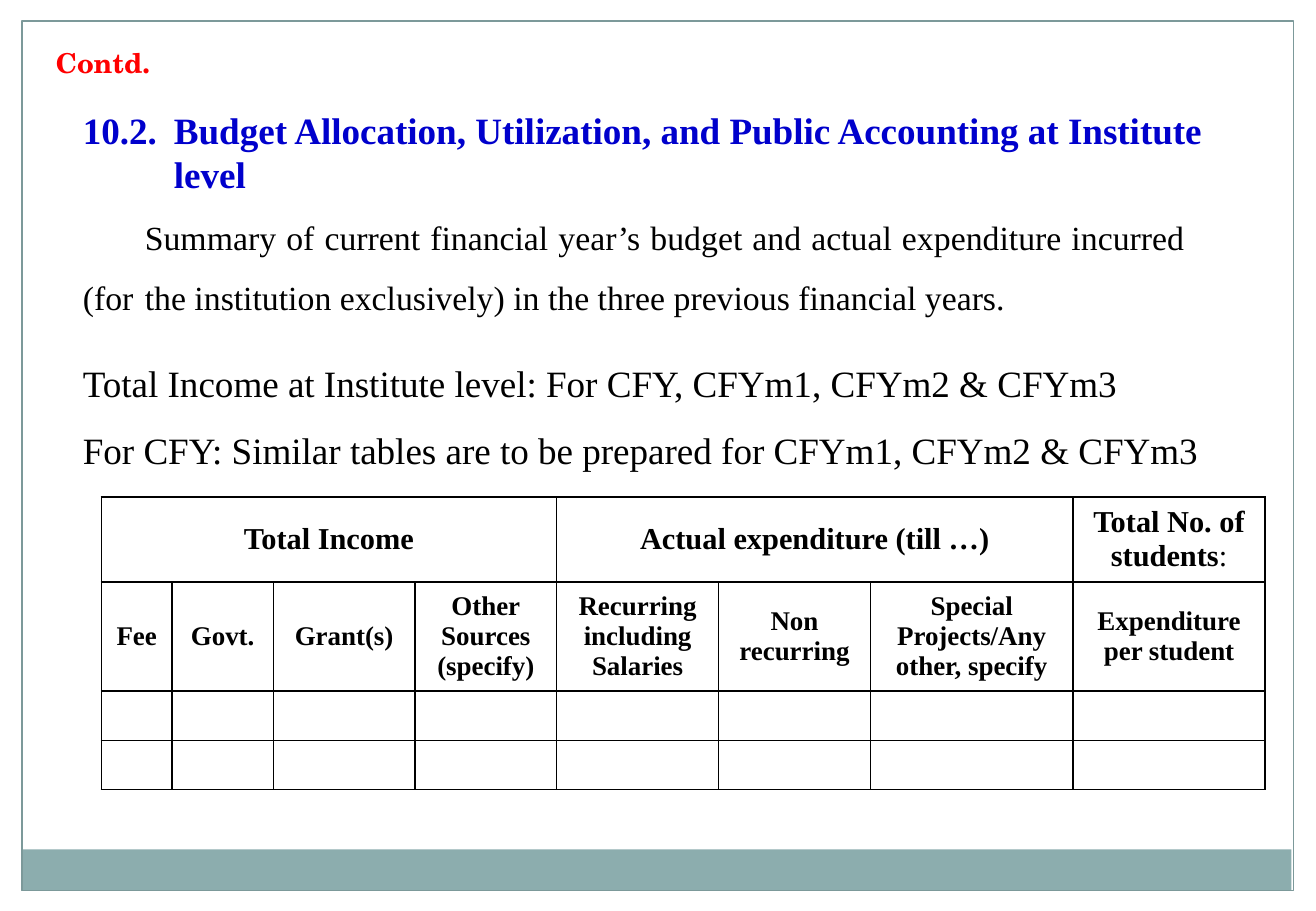
from dataclasses import dataclass
from typing import Optional

from lxml import etree
from pptx import Presentation
from pptx import util as u
from pptx.dml.color import RGBColor
from pptx.enum import shapes, text
from pptx.oxml import ns

SERIF = "Times New Roman"
BLACK, WHITE, BLUE, RED = "000000", "FFFFFF", "0000CC", "FF0000"
SLIDE_WIDTH, SLIDE_HEIGHT = 780, 540


@dataclass
class Panel:
    left: float
    top: float
    width: float
    height: float
    fill: Optional[str] = None
    line: Optional[str] = None


@dataclass
class Heading:
    """A table cell that may span several columns."""
    row: int
    column: int
    lines: list[str]
    size: float
    span: int = 1


PANELS = [
    Panel(0, 0, SLIDE_WIDTH, 12, fill=WHITE),
    Panel(767, 0, 13, SLIDE_HEIGHT, fill=WHITE),
    Panel(0, 0, 13, SLIDE_HEIGHT, fill=WHITE),
    Panel(12.5, 503.5, 753, 24.5, fill="8CADAE"),
    Panel(13, 12.5, 753.5, 515.5, line="7C999A"),
]

COLUMN_WIDTHS = [42, 60, 84, 84, 96, 90, 120, 114]
ROW_HEIGHTS = [50.4, 64.8, 29.2, 29.2]
GROUPS = [
    Heading(0, 0, ["Total Income"], 18, span=4),
    Heading(0, 4, ["Actual expenditure (till …)"], 18, span=3),
    Heading(0, 7, ["Total No. of", "students"], 18),
]
SUBHEADINGS = [
    ["Fee"],
    ["Govt."],
    ["Grant(s)"],
    ["Other", "Sources", "(specify)"],
    ["Recurring", "including", "Salaries"],
    ["Non recurring"],
    ["Special", "Projects/Any", "other, specify"],
    ["Expenditure", "per student"],
]


def rgb(value: str) -> RGBColor:
    return RGBColor.from_string(value)


def write(paragraph, words: str, *, size: float, font: str = SERIF,
          color: str = BLACK, bold: bool = False, align=None,
          spacing: Optional[float] = None) -> None:
    """Add one formatted run to a paragraph."""
    run = paragraph.add_run()
    run.text = words
    run.font.size = u.Pt(size)
    run.font.name = font
    run.font.bold = bold
    run.font.color.rgb = rgb(color)
    if align is not None:
        paragraph.alignment = align
    if spacing is not None:
        paragraph.line_spacing = spacing


def add_panel(slide, panel: Panel) -> None:
    shape = slide.shapes.add_shape(
        shapes.MSO_SHAPE.RECTANGLE, u.Pt(panel.left), u.Pt(panel.top),
        u.Pt(panel.width), u.Pt(panel.height))
    shape.shadow.inherit = False
    if panel.fill:
        shape.fill.solid()
        shape.fill.fore_color.rgb = rgb(panel.fill)
    else:
        shape.fill.background()
    if panel.line:
        shape.line.color.rgb = rgb(panel.line)
        shape.line.width = u.Pt(0.75)
    else:
        shape.line.fill.background()


def add_frame(slide, left: float, top: float, width: float, height: float):
    """Add a wrapping text box and return its text frame."""
    box = slide.shapes.add_textbox(
        u.Pt(left), u.Pt(top), u.Pt(width), u.Pt(height))
    box.text_frame.word_wrap = True
    return box.text_frame


def set_indent(paragraph, margin: float, hanging: float) -> None:
    properties = paragraph._p.get_or_add_pPr()
    properties.set("marL", str(u.Pt(margin)))
    properties.set("indent", str(-u.Pt(hanging)))


def set_tab(paragraph, position: float) -> None:
    stops = etree.SubElement(paragraph._p.get_or_add_pPr(), ns.qn("a:tabLst"))
    etree.SubElement(stops, ns.qn("a:tab"), pos=str(u.Pt(position)), algn="l")


def style_cell(cell) -> None:
    """Give a cell thin black borders, no fill and middle anchoring."""
    properties = cell._tc.get_or_add_tcPr()
    for side in ("lnL", "lnR", "lnT", "lnB"):
        border = etree.SubElement(properties, ns.qn(f"a:{side}"), w=str(u.Pt(1)))
        fill = etree.SubElement(border, ns.qn("a:solidFill"))
        etree.SubElement(fill, ns.qn("a:srgbClr"), val=BLACK)
    cell.fill.background()
    cell.vertical_anchor = text.MSO_ANCHOR.MIDDLE


def add_budget_table(slide) -> None:
    table = slide.shapes.add_table(
        len(ROW_HEIGHTS), len(COLUMN_WIDTHS), u.Pt(60), u.Pt(294.5),
        u.Pt(sum(COLUMN_WIDTHS)), u.Pt(sum(ROW_HEIGHTS))).table
    table.first_row = table.horz_banding = False
    for column, width in zip(table.columns, COLUMN_WIDTHS):
        column.width = u.Pt(width)
    for row, height in zip(table.rows, ROW_HEIGHTS):
        row.height = u.Pt(height)
    for cell in table.iter_cells():
        style_cell(cell)

    subheadings = [Heading(1, i, lines, 16) for i, lines in enumerate(SUBHEADINGS)]
    for heading in GROUPS + subheadings:
        cell = table.cell(heading.row, heading.column)
        if heading.span > 1:
            cell.merge(table.cell(heading.row, heading.column + heading.span - 1))
        for i, line in enumerate(heading.lines):
            paragraph = cell.text_frame.paragraphs[0] if i == 0 else cell.text_frame.add_paragraph()
            write(paragraph, line, size=heading.size, bold=True,
                  align=text.PP_ALIGN.CENTER)
    students = table.cell(0, len(COLUMN_WIDTHS) - 1).text_frame.paragraphs[-1]
    write(students, ":", size=18)


def main() -> None:
    deck = Presentation()
    deck.slide_width, deck.slide_height = u.Pt(SLIDE_WIDTH), u.Pt(SLIDE_HEIGHT)
    slide = deck.slides.add_slide(deck.slide_layouts[6])
    for panel in PANELS:
        add_panel(slide, panel)

    section = add_frame(slide, 42, 60, 708, 133)
    title = section.paragraphs[0]
    write(title, "10.2.\tBudget Allocation, Utilization, and Public Accounting "
          "at Institute level", size=22, color=BLUE, bold=True)
    set_indent(title, 54, 54)
    summary = section.add_paragraph()
    write(summary, "\tSummary of current financial year’s budget and actual "
          "expenditure incurred \t(for \tthe institution exclusively) in the "
          "three previous financial years.", size=20,
          align=text.PP_ALIGN.JUSTIFY, spacing=1.5)
    set_tab(summary, 36.75)

    income = add_frame(slide, 42, 210, 696, 74)
    write(income.paragraphs[0], "Total Income at Institute level: "
          "For CFY, CFYm1, CFYm2 & CFYm3", size=22)
    write(income.add_paragraph(), "For CFY: Similar tables are to be prepared "
          "for CFYm1, CFYm2 & CFYm3", size=22, spacing=1.5)

    add_budget_table(slide)

    continued = add_frame(slide, 26, 24, 728, 24)
    write(continued.paragraphs[0], "Contd.", size=16.2, font="TeX Gyre Schola",
          color=RED, bold=True)
    deck.save("out.pptx")


if __name__ == "__main__":
    main()
